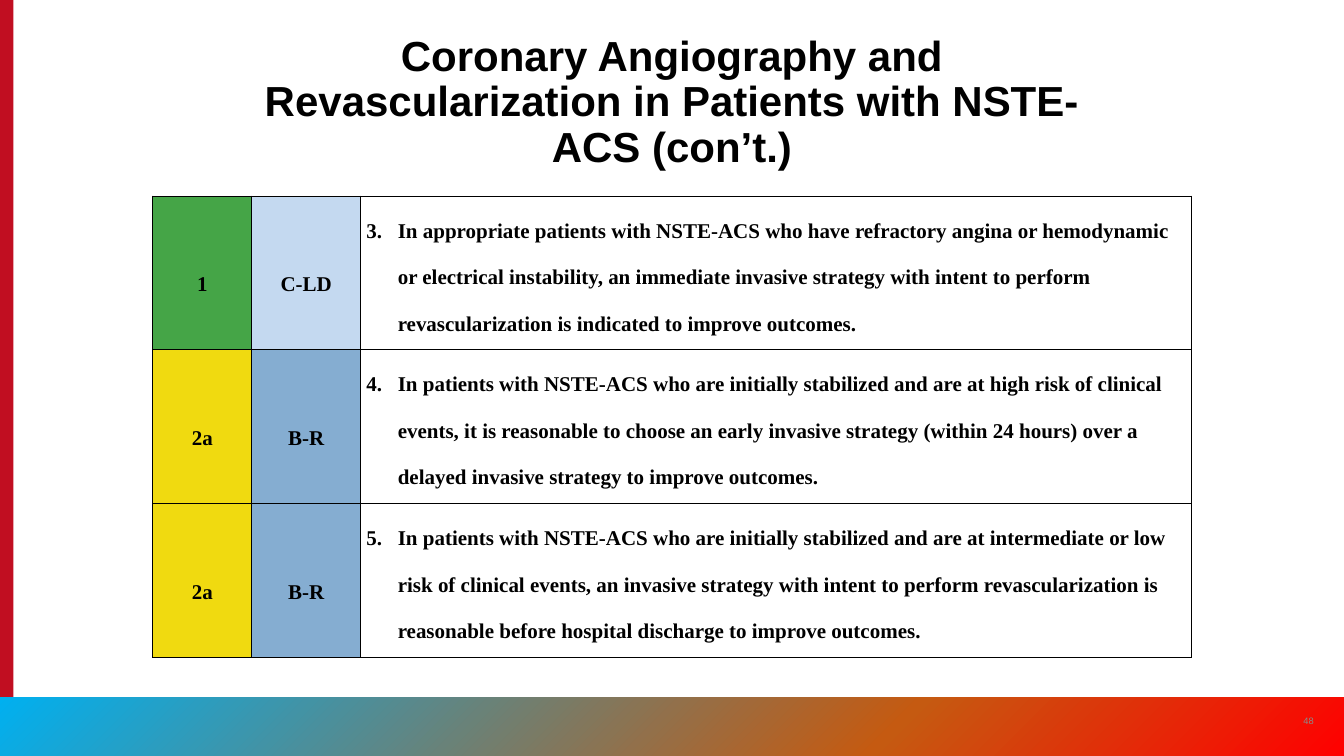
from copy import deepcopy

from pptx import Presentation
from pptx.dml.color import RGBColor
from pptx.enum.shapes import MSO_SHAPE as Shape
from pptx.enum.text import MSO_ANCHOR as Anchor, PP_ALIGN as Align
from pptx.oxml.ns import qn
from pptx.util import Pt
from lxml.etree import SubElement

COLORS = {
    "black": "000000",
    "edge": "C10E21",
    "number": "8A8B8A",
    "1": "45A547",
    "2a": "F0DA10",
    "C-LD": "C4D9F0",
    "B-R": "85ADD1",
}
FOOTER_STOPS = [(0, "00B0F0"), (0.66, "C55A11"), (1, "FF0000")]
RECOMMENDATIONS = [
    ("1", "C-LD",
     "In appropriate patients with NSTE-ACS who have refractory angina or "
     "hemodynamic or electrical instability, an immediate invasive strategy "
     "with intent to perform revascularization is indicated to improve outcomes."),
    ("2a", "B-R",
     "In patients with NSTE-ACS who are initially stabilized and are at high "
     "risk of clinical events, it is reasonable to choose an early invasive "
     "strategy (within 24 hours) over a delayed invasive strategy to improve "
     "outcomes."),
    ("2a", "B-R",
     "In patients with NSTE-ACS who are initially stabilized and are at "
     "intermediate or low risk of clinical events, an invasive strategy with "
     "intent to perform revascularization is reasonable before hospital "
     "discharge to improve outcomes."),
]
FIRST_NUMBER = 3
COLUMN_WIDTHS = [85, 93, 712]


def rgb(name):
    return RGBColor.from_string(COLORS[name])


def style(paragraph, font_name, size, color, bold, align, spacing):
    paragraph.alignment = align
    paragraph.line_spacing = spacing
    for run in paragraph.runs:
        run.font.name = font_name
        run.font.size = Pt(size)
        run.font.bold = bold
        run.font.color.rgb = rgb(color)


def add_band(slide, left, top, width, height):
    band = slide.shapes.add_shape(
        Shape.RECTANGLE, Pt(left), Pt(top), Pt(width), Pt(height))
    band.shadow.inherit = False
    band.line.fill.background()
    return band


def add_edge(slide, left, top, width, height):
    edge = add_band(slide, left, top, width, height)
    edge.fill.solid()
    edge.fill.fore_color.rgb = rgb("edge")


def add_footer(slide, left, top, width, height):
    footer = add_band(slide, left, top, width, height)
    footer.fill.gradient()
    footer.fill.gradient_angle = 315
    stop_list = next(footer._element.iter(qn("a:gsLst")))
    stop_list.append(deepcopy(stop_list[0]))
    for stop, (position, color) in zip(footer.fill.gradient_stops, FOOTER_STOPS):
        stop.position = position
        stop.color.rgb = RGBColor.from_string(color)

    side = 34.5
    page_number = slide.shapes.add_textbox(
        Pt(left + width - side - 13), Pt(top + 3), Pt(side), Pt(side))
    frame = page_number.text_frame
    frame.word_wrap = True
    frame.vertical_anchor = Anchor.MIDDLE
    frame.text = "48"
    style(frame.paragraphs[0], "Arial", 8, "number", False, Align.CENTER, 1.0)


def add_title(slide, left, top, width, height):
    title = slide.shapes.title
    title.left, title.top = Pt(left), Pt(top)
    title.width, title.height = Pt(width), Pt(height)
    frame = title.text_frame
    frame.word_wrap = True
    frame.vertical_anchor = Anchor.BOTTOM
    frame.text = ("Coronary Angiography and Revascularization in Patients "
                  "with NSTE-ACS (con’t.)")
    style(frame.paragraphs[0], "Arial", 36, "black", True, Align.CENTER, 0.9)


def add_borders(cell):
    properties = cell._tc.get_or_add_tcPr()
    for position, side in enumerate(("a:lnL", "a:lnR", "a:lnT", "a:lnB")):
        border = SubElement(properties, qn(side), w=str(Pt(1)))
        fill = SubElement(border, qn("a:solidFill"))
        SubElement(fill, qn("a:srgbClr"), val=COLORS["black"])
        properties.insert(position, border)


def add_numbering(paragraph, number):
    properties = paragraph._p.get_or_add_pPr()
    properties.set("marL", str(Pt(27)))
    properties.set("indent", str(-Pt(27)))
    bullet_color = SubElement(properties, qn("a:buClr"))
    SubElement(bullet_color, qn("a:srgbClr"), val=COLORS["black"])
    SubElement(properties, qn("a:buAutoNum"),
               type="arabicPeriod", startAt=str(number))


def fill_cell(cell, text, number=None):
    cell.margin_left = cell.margin_right = Pt(5)
    cell.margin_top = cell.margin_bottom = 0
    cell.text_frame.text = text
    paragraph = cell.text_frame.paragraphs[0]
    if number is None:
        cell.vertical_anchor = Anchor.MIDDLE
        cell.fill.solid()
        cell.fill.fore_color.rgb = rgb(text)
        align = Align.CENTER
    else:
        cell.vertical_anchor = Anchor.TOP
        cell.fill.background()
        add_numbering(paragraph, number)
        align = Align.LEFT
    style(paragraph, "Times New Roman", 18, "black", True, align, 2.0)
    add_borders(cell)


def add_recommendations(slide, left, top, width, height):
    table = slide.shapes.add_table(
        len(RECOMMENDATIONS), len(COLUMN_WIDTHS),
        Pt(left), Pt(top), Pt(width), Pt(height)).table
    table.first_row = table.horz_banding = False
    for column, column_width in zip(table.columns, COLUMN_WIDTHS):
        column.width = Pt(column_width)
    for row, (strength, evidence, advice) in enumerate(RECOMMENDATIONS):
        fill_cell(table.cell(row, 0), strength)
        fill_cell(table.cell(row, 1), evidence)
        fill_cell(table.cell(row, 2), advice, FIRST_NUMBER + row)


def main():
    deck = Presentation()
    deck.slide_width, deck.slide_height = Pt(1152), Pt(648)
    slide = deck.slides.add_slide(deck.slide_layouts[5])
    add_edge(slide, 0, 0, 11.5, 648)
    add_footer(slide, 0, 597.5, 1152, 50.5)
    add_title(slide, 183, 66.5, 786, 84)
    add_recommendations(slide, 131, 168, sum(COLUMN_WIDTHS), 395.5)
    deck.save("out.pptx")


if __name__ == "__main__":
    main()
